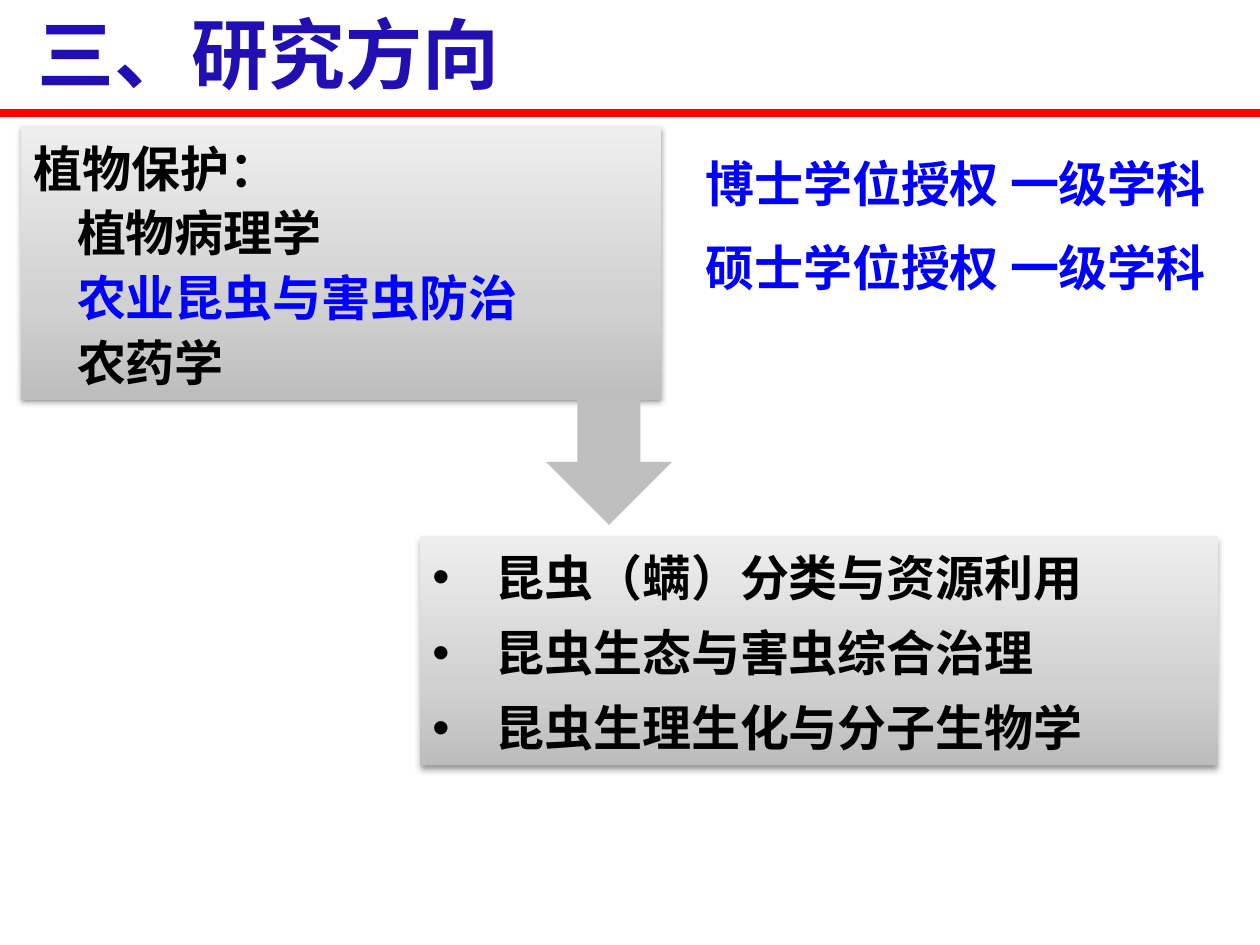
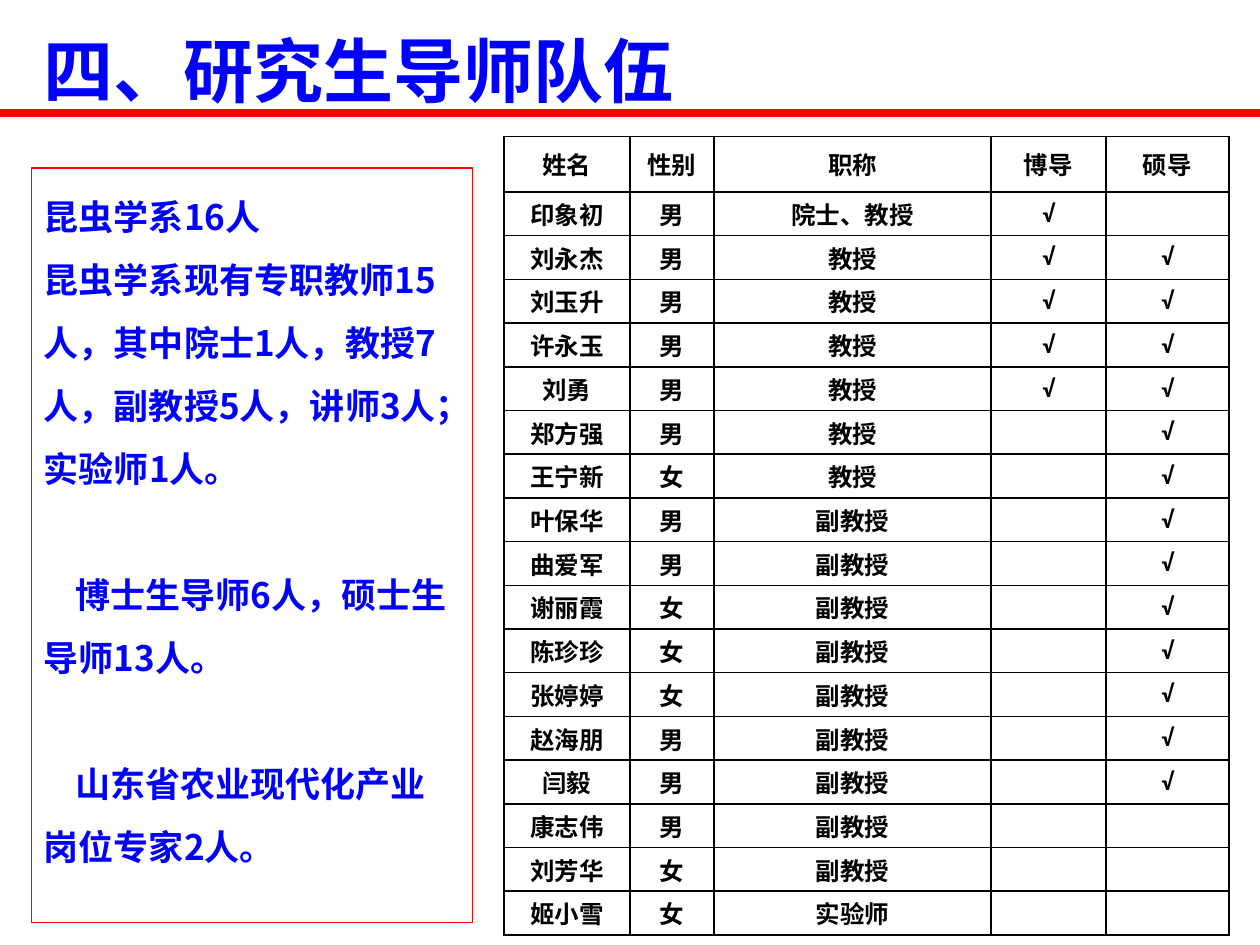
from dataclasses import dataclass

import pptx
import pptx.dml.color
import pptx.enum.shapes
import pptx.enum.text
import pptx.oxml
import pptx.oxml.ns
import pptx.util

Pt = pptx.util.Pt
ANCHOR = pptx.enum.text.MSO_ANCHOR
SHAPES = pptx.enum.shapes.MSO_SHAPE
NAMESPACE = pptx.oxml.ns.nsdecls("a")


@dataclass(frozen=True)
class Theme:
    black: str = "000000"
    blue: str = "0000FF"
    indigo: str = "220FB1"
    red: str = "FF0000"
    arrow: str = "BFBFBF"
    gradient: tuple = ((0, "BDBDBD"), (35, "D1D1D1"), (100, "EEEEEE"))
    sans: str = "Noto Sans CJK SC"
    serif: str = "Times New Roman"
    latin: str = "Calibri"
    large_title: int = 44
    title: int = 40
    heading: int = 28
    body: int = 20
    table: int = 14


THEME = Theme()
CHECK = "√"

TABLE_HEADER = ("姓名", "性别", "职称", "博导", "硕导")
SUPERVISORS = (
    ("印象初", "男", "院士、教授", CHECK, ""),
    ("刘永杰", "男", "教授", CHECK, CHECK),
    ("刘玉升", "男", "教授", CHECK, CHECK),
    ("许永玉", "男", "教授", CHECK, CHECK),
    ("刘勇", "男", "教授", CHECK, CHECK),
    ("郑方强", "男", "教授", "", CHECK),
    ("王宁新", "女", "教授", "", CHECK),
    ("叶保华", "男", "副教授", "", CHECK),
    ("曲爱军", "男", "副教授", "", CHECK),
    ("谢丽霞", "女", "副教授", "", CHECK),
    ("陈珍珍", "女", "副教授", "", CHECK),
    ("张婷婷", "女", "副教授", "", CHECK),
    ("赵海朋", "男", "副教授", "", CHECK),
    ("闫毅", "男", "副教授", "", CHECK),
    ("康志伟", "男", "副教授", "", ""),
    ("刘芳华", "女", "副教授", "", ""),
    ("姬小雪", "女", "实验师", "", ""),
)


def color(value):
    return pptx.dml.color.RGBColor.from_string(value)


def append_xml(parent, xml):
    parent.append(pptx.oxml.parse_xml(xml))


# Text
def add_run(paragraph, text, size, font, fill):
    run = paragraph.add_run()
    run.text = text
    run.font.size = Pt(size)
    run.font.name = font
    run.font.bold = True
    run.font.color.rgb = color(fill)
    append_xml(run.font._element, f'<a:ea {NAMESPACE} typeface="{THEME.sans}"/>')


def add_paragraph(frame, first, text, size, font, fill, spacing=1.0,
                  before=0, margin=0, indent=0, bullet=None):
    paragraph = frame.paragraphs[0] if first else frame.add_paragraph()
    paragraph.alignment = pptx.enum.text.PP_ALIGN.LEFT
    paragraph.line_spacing = spacing
    paragraph.space_before = Pt(before)
    properties = paragraph._p.get_or_add_pPr()
    properties.set("marL", str(Pt(margin)))
    properties.set("indent", str(Pt(indent)))
    if bullet:
        append_xml(properties, f'<a:buFont {NAMESPACE} typeface="Arial"/>')
        append_xml(properties, f'<a:buChar {NAMESPACE} char="{bullet}"/>')
    add_run(paragraph, text, size, font, fill)


def add_label(slide, box, text, size, font, fill, wrap=True):
    frame = slide.shapes.add_textbox(*map(Pt, box)).text_frame
    frame.word_wrap = wrap
    add_paragraph(frame, True, text, size, font, fill)


# Shapes
def add_plain_shape(slide, kind, box):
    shape = slide.shapes.add_shape(kind, *map(Pt, box))
    shape.shadow.inherit = False
    shape.line.fill.background()
    shape.fill.background()
    shape.text_frame.word_wrap = True
    shape.text_frame.vertical_anchor = ANCHOR.TOP
    return shape


def add_gradient_panel(slide, box, blur, distance, opacity):
    shape = add_plain_shape(slide, SHAPES.RECTANGLE, box)
    properties = shape._element.spPr
    stops = "".join(
        f'<a:gs pos="{position * 1000}"><a:srgbClr val="{value}"/></a:gs>'
        for position, value in THEME.gradient)
    gradient = pptx.oxml.parse_xml(
        f'<a:gradFill {NAMESPACE} rotWithShape="1"><a:gsLst>{stops}</a:gsLst>'
        '<a:lin ang="16200000" scaled="0"/></a:gradFill>')
    properties.replace(properties.find(pptx.oxml.ns.qn("a:noFill")), gradient)
    append_xml(
        properties.find(pptx.oxml.ns.qn("a:effectLst")),
        f'<a:outerShdw {NAMESPACE} blurRad="{Pt(blur)}" dist="{Pt(distance)}" '
        f'dir="5400000" rotWithShape="0"><a:srgbClr val="{THEME.black}">'
        f'<a:alpha val="{opacity * 1000}"/></a:srgbClr></a:outerShdw>')
    return shape.text_frame


def add_title_rule(slide):
    connector = slide.shapes.add_connector(
        pptx.enum.shapes.MSO_CONNECTOR.STRAIGHT, Pt(0), Pt(64.8), Pt(720), Pt(64.8))
    connector.line.color.rgb = color(THEME.red)
    connector.line.width = Pt(4.5)
    append_xml(connector._element.spPr, f"<a:effectLst {NAMESPACE}/>")


# Table
def style_cell(cell, text):
    cell.fill.background()
    cell.vertical_anchor = ANCHOR.MIDDLE
    cell.margin_left = cell.margin_right = Pt(5)
    cell.margin_top = cell.margin_bottom = Pt(0)
    paragraph = cell.text_frame.paragraphs[0]
    paragraph.alignment = pptx.enum.text.PP_ALIGN.CENTER
    if text:
        add_run(paragraph, text, THEME.table, THEME.latin, THEME.black)
    else:
        paragraph.font.size = Pt(THEME.table)
    properties = cell._tc.get_or_add_tcPr()
    for position, side in enumerate(("lnL", "lnR", "lnT", "lnB")):
        properties.insert(position, pptx.oxml.parse_xml(
            f'<a:{side} {NAMESPACE} w="{Pt(1)}"><a:solidFill>'
            f'<a:srgbClr val="{THEME.black}"/></a:solidFill></a:{side}>'))


def add_grid(slide, left, top, widths, header_height, row_height, rows):
    height = header_height + row_height * (len(rows) - 1)
    table = slide.shapes.add_table(
        len(rows), len(widths), Pt(left), Pt(top), Pt(sum(widths)), Pt(height)).table
    table.first_row = table.horz_banding = False
    for column, width in zip(table.columns, widths):
        column.width = Pt(width)
    for index, values in enumerate(rows):
        table.rows[index].height = Pt(row_height if index else header_height)
        for column, text in enumerate(values):
            style_cell(table.cell(index, column), text)


# Slides
def add_directions_slide(slide):
    add_label(slide, (14.4, 0, 281.5, 60.5), "三、研究方向",
              THEME.large_title, THEME.sans, THEME.indigo, wrap=False)
    add_title_rule(slide)

    # Research topics
    topics = add_gradient_panel(slide, (240, 306, 456, 131), 4, 3, 40)
    for index, text in enumerate(
            ("昆虫（螨）分类与资源利用", "昆虫生态与害虫综合治理", "昆虫生理生化与分子生物学")):
        add_paragraph(topics, index == 0, text, THEME.heading, THEME.serif, THEME.black,
                      spacing=1.1, before=6, margin=36, indent=-36, bullet="•")

    # Discipline and its branches
    discipline = add_gradient_panel(slide, (12, 72, 366, 156.5), 3.1, 1.6, 38)
    for index, (text, fill) in enumerate((
            ("植物保护：", THEME.black), ("植物病理学", THEME.black),
            ("农业昆虫与害虫防治", THEME.blue), ("农药学", THEME.black))):
        add_paragraph(discipline, index == 0, text, THEME.heading, THEME.serif, fill,
                      spacing=1.1, margin=25 if index else 0)

    # Degree programmes
    for index, degree in enumerate(("博士", "硕士")):
        add_label(slide, (396, 84 + 48 * index, 324, 41), f"{degree}学位授权 一级学科",
                  THEME.heading, THEME.sans, THEME.blue)

    arrow = add_plain_shape(slide, SHAPES.DOWN_ARROW, (312, 228, 72, 72))
    arrow.fill.solid()
    arrow.fill.fore_color.rgb = color(THEME.arrow)


def add_supervisors_slide(slide):
    add_title_rule(slide)

    # Staff summary
    summary = add_plain_shape(slide, SHAPES.RECTANGLE, (18, 96, 252, 431))
    summary.line.color.rgb = color(THEME.red)
    summary.line.width = Pt(0.75)
    for index, (text, before, indent) in enumerate((
            ("昆虫学系16人", 0, 0),
            ("昆虫学系现有专职教师15人，其中院士1人，教授7人，副教授5人，讲师3人；实验师1人。", 0, 0),
            ("博士生导师6人，硕士生导师13人。", 36, 18),
            ("山东省农业现代化产业岗位专家2人。", 36, 18))):
        add_paragraph(summary.text_frame, index == 0, text, THEME.body, THEME.sans,
                      THEME.blue, spacing=1.5, before=before, indent=indent)

    add_label(slide, (18, 12, 500, 55.5), "四、研究生导师队伍",
              THEME.title, THEME.latin, THEME.blue)
    add_grid(slide, 288, 78, (72, 48, 158.4, 65.5, 70.5), 31.7, 25,
             (TABLE_HEADER, *SUPERVISORS))


def main():
    presentation = pptx.Presentation()
    presentation.slide_width = Pt(720)
    presentation.slide_height = Pt(540)
    blank = presentation.slide_layouts[6]
    add_directions_slide(presentation.slides.add_slide(blank))
    add_supervisors_slide(presentation.slides.add_slide(blank))
    presentation.save("out.pptx")


if __name__ == "__main__":
    main()
